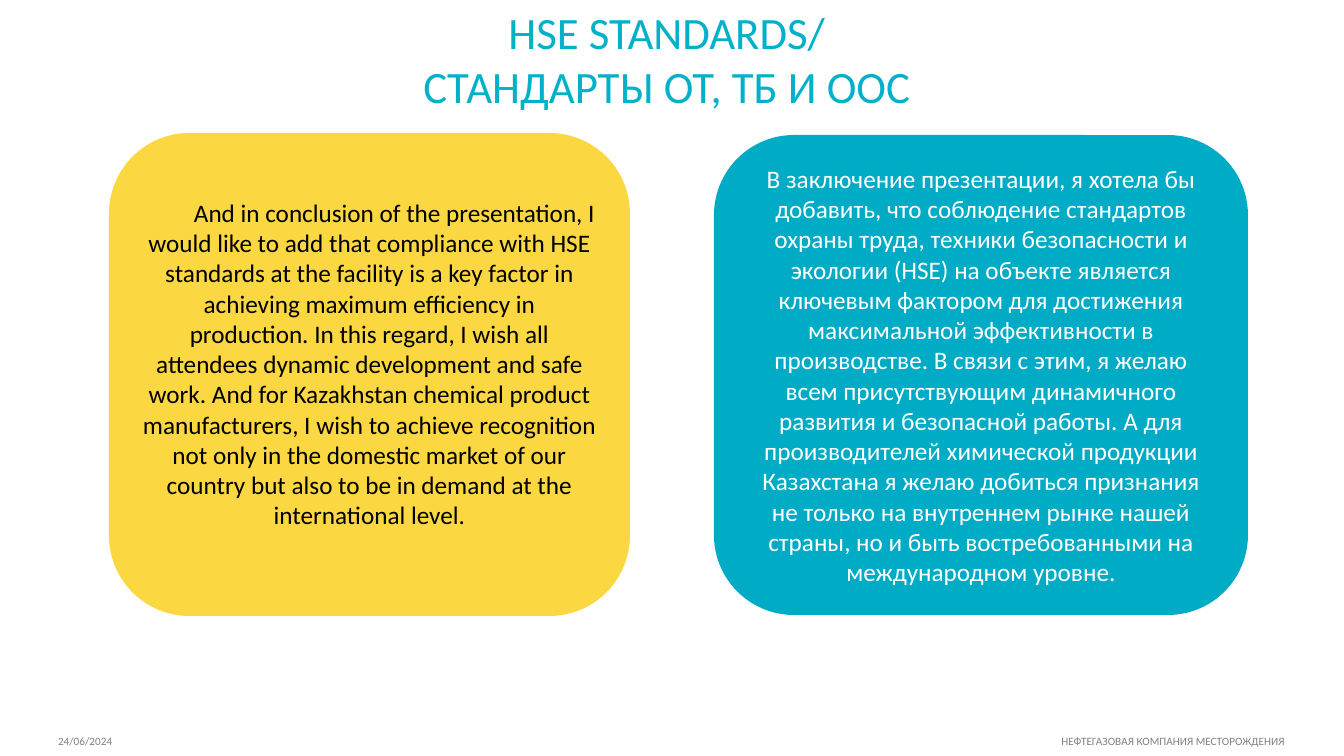
from pptx import Presentation
from pptx.dml.color import RGBColor
from pptx.enum.shapes import MSO_SHAPE
from pptx.enum.text import MSO_ANCHOR, MSO_AUTO_SIZE, PP_ALIGN
from pptx.oxml.ns import qn
from pptx.util import Emu, Pt
from lxml import etree

ROUND = MSO_SHAPE.ROUNDED_RECTANGLE
TOP, MIDDLE = MSO_ANCHOR.TOP, MSO_ANCHOR.MIDDLE
LEFT, CENTER = PP_ALIGN.LEFT, PP_ALIGN.CENTER
FONT = "Calibri"
COLORS = {
    "title": "01B1C9",
    "yellow": "FBD741",
    "teal": "00ABC5",
    "black": "000000",
    "white": "FFFFFF",
    "gray": "808080",
}
WIDTH, HEIGHT = 1344, 756
INSET = (10, 5, 10, 5)

TITLE = "HSE STANDARDS/ \nСТАНДАРТЫ ОТ, ТБ И ООС "
ENGLISH = (
    "And in conclusion of the presentation, I would like to add that "
    "compliance with HSE standards at the facility is a key factor in "
    "achieving maximum efficiency in production. In this regard, I wish all "
    "attendees dynamic development and safe work. And for Kazakhstan chemical "
    "product manufacturers, I wish to achieve recognition not only in the "
    "domestic market of our country but also to be in demand at the "
    "international level."
)
RUSSIAN = (
    "В заключение презентации, я хотела бы добавить, что соблюдение стандартов "
    "охраны труда, техники безопасности и экологии (HSE) на объекте является "
    "ключевым фактором для достижения максимальной эффективности в "
    "производстве. В связи с этим, я желаю всем присутствующим динамичного "
    "развития и безопасной работы. А для производителей химической продукции "
    "Казахстана я желаю добиться признания не только на внутреннем рынке нашей "
    "страны, но и быть востребованными на международном уровне."
)
FOOTER = "24/06/2024\tНЕФТЕГАЗОВАЯ КОМПАНИЯ МЕСТОРОЖДЕНИЯ"


def px(n):
    return Emu(round(n * 914400 / 100.8))


def rgb(name):
    return RGBColor.from_string(COLORS[name])


def write(shape, text, size, color, align=CENTER, anchor=MIDDLE,
          inset=INSET, indent=0, tab=0):
    """Fill a shape with text; indent shifts first lines, tab is a right stop."""
    frame = shape.text_frame
    frame.text = text
    frame.word_wrap = True
    frame.auto_size = MSO_AUTO_SIZE.NONE
    frame.vertical_anchor = anchor
    (frame.margin_left, frame.margin_top,
     frame.margin_right, frame.margin_bottom) = map(px, inset)
    for para in frame.paragraphs:
        para.alignment = align
        props = para._p.get_or_add_pPr()
        if indent:
            props.set("indent", str(px(indent)))
        if tab:
            stops = etree.SubElement(props, qn("a:tabLst"))
            etree.SubElement(stops, qn("a:tab"), pos=str(px(tab)), algn="r")
        for run in para.runs:
            run.font.name = FONT
            run.font.size = Pt(size)
            run.font.color.rgb = rgb(color)


def head(slide, box):
    title = slide.shapes.title
    title.left, title.top, title.width, title.height = map(px, box)
    write(title, TITLE, 32, "title", anchor=TOP)


def card(slide, box, fill, text, color, **form):
    shape = slide.shapes.add_shape(ROUND, *map(px, box))
    shape.shadow.inherit = False
    shape.fill.solid()
    shape.fill.fore_color.rgb = rgb(fill)
    shape.line.fill.background()
    write(shape, text, 18, color, **form)


def foot(slide, box, side=58):
    shape = slide.shapes.add_textbox(*map(px, box))
    write(shape, FOOTER, 8, "gray", align=LEFT, anchor=TOP,
          inset=(side, 5, side, 0), tab=box[2] - 2 * side - 1)


def main():
    deck = Presentation()
    deck.slide_width, deck.slide_height = px(WIDTH), px(HEIGHT)
    slide = deck.slides.add_slide(deck.slide_layouts[5])
    head(slide, (0, 0, WIDTH, 119))
    card(slide, (109, 133, 521, 483), "yellow", ENGLISH, "black",
         inset=(10, 5, 10, 27), indent=50)
    card(slide, (714, 135, 534, 480), "teal", RUSSIAN, "white")
    foot(slide, (0, 729, WIDTH, 27))
    deck.save("out.pptx")


if __name__ == "__main__":
    main()
